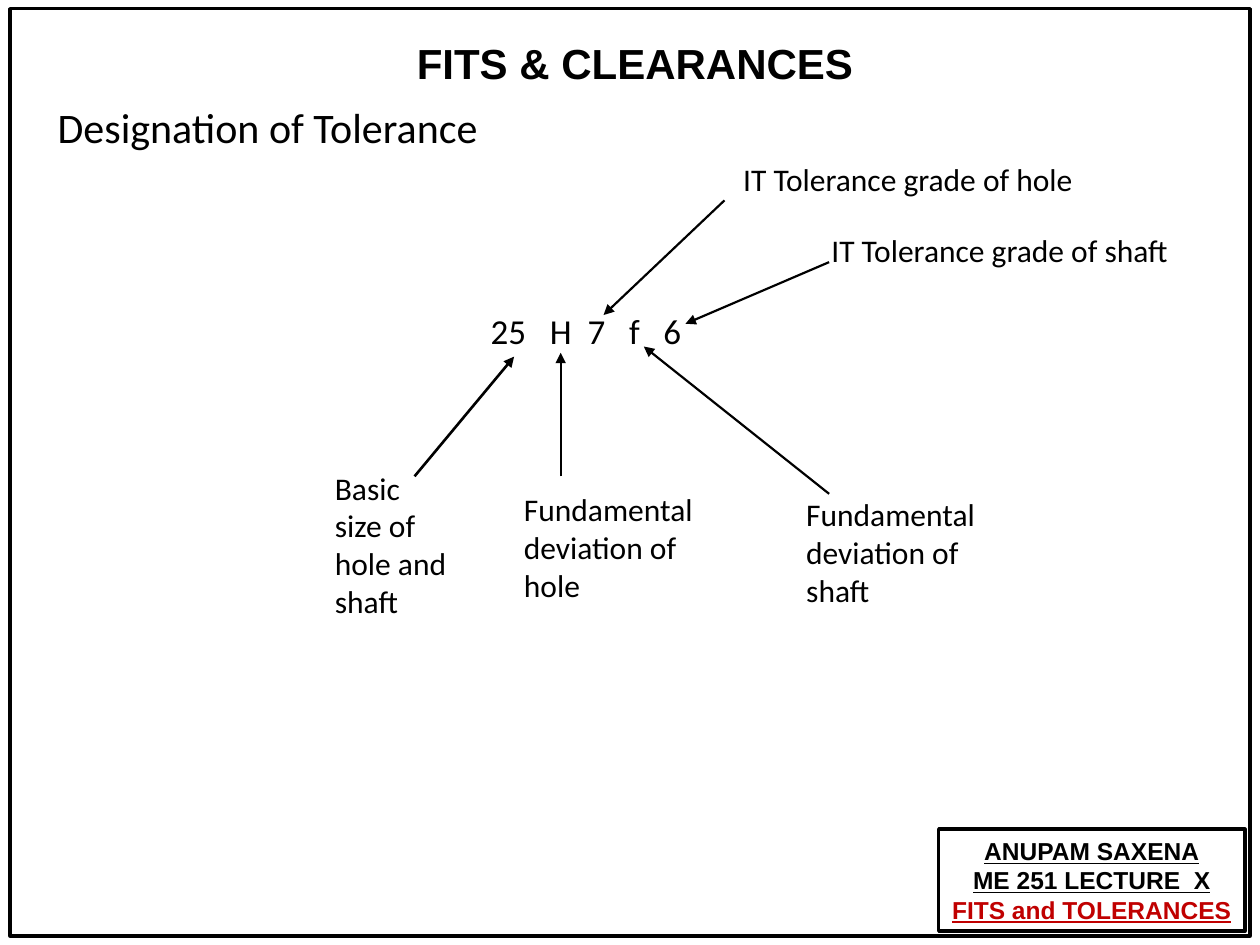
from dataclasses import dataclass, field

import lxml.etree
import pptx
import pptx.dml.color
import pptx.enum.shapes
import pptx.enum.text
import pptx.oxml.ns
import pptx.util

Pt = pptx.util.Pt
qn = pptx.oxml.ns.qn
ALIGN = pptx.enum.text.PP_ALIGN
ANCHOR = pptx.enum.text.MSO_ANCHOR
RECT = pptx.enum.shapes.MSO_SHAPE.RECTANGLE
STRAIGHT = pptx.enum.shapes.MSO_CONNECTOR.STRAIGHT

BLACK = pptx.dml.color.RGBColor(0, 0, 0)
RED = pptx.dml.color.RGBColor(0xC0, 0, 0)

BODY = {"name": "Calibri", "size": Pt(18)}
CODE = {"name": "Calibri", "size": Pt(20)}
TOPIC = {"name": "Calibri", "size": Pt(24)}
HEAD = {"name": "Arial", "size": Pt(24), "bold": True}
STAMP = {"name": "Arial", "size": Pt(14), "bold": True, "underline": True}


@dataclass
class Label:
    text: str
    left: float
    top: float
    width: float
    height: float
    font: dict = field(default_factory=lambda: BODY)
    align: ALIGN = ALIGN.LEFT
    wrap: bool = True


@dataclass
class Arrow:
    start: tuple[float, float]
    end: tuple[float, float]
    weight: float = 1.25


LABELS = [
    Label("FITS & CLEARANCES", 229.7, 18, 266.4, 36, HEAD, ALIGN.CENTER, False),
    Label("Designation of Tolerance", 25.9, 54.7, 465.1, 36, TOPIC),
    Label("Basic size of hole and shaft", 184.3, 264.2, 79.2, 94.3),
    Label("Fundamental deviation of hole", 292.3, 276.5, 118.8, 72.7),
    Label("IT Tolerance grade of hole", 417.6, 87.8, 244.1, 28.8),
    Label("Fundamental deviation of shaft", 453.6, 279.4, 118.8, 72.7),
    Label("IT Tolerance grade of shaft", 468, 128.2, 244.1, 28.8),
]
SYMBOLS = Label("25\tH\t7\tf\t6", 190.1, 173.5, 289.4, 31.7, CODE)
INDENT = 90.3
STOPS = [33.84, 55.34, 79.04, 98.7]

ARROWS = [
    Arrow((236.9, 272.2), (293.8, 203.8), 1.5),
    Arrow((320.4, 272.2), (320.4, 201.6)),
    Arrow((414, 114.5), (344.9, 180)),
    Arrow((473.8, 282.2), (367.9, 198)),
    Arrow((473.8, 149.8), (391.7, 185)),
]


def style(item: object, looks: dict) -> None:
    for key, value in looks.items():
        setattr(item, key, value)


def write(frame, text: str, font: dict, align: ALIGN, wrap: bool) -> None:
    frame.text = text
    frame.word_wrap = wrap
    for line in frame.paragraphs:
        line.alignment = align
        for run in line.runs:
            style(run.font, font)
            run.font.color.rgb = BLACK


def add_label(slide, label: Label):
    box = slide.shapes.add_textbox(
        Pt(label.left), Pt(label.top), Pt(label.width), Pt(label.height))
    write(box.text_frame, label.text, label.font, label.align, label.wrap)
    return box.text_frame


def add_frame(slide, left: float, top: float, width: float, height: float):
    shape = slide.shapes.add_shape(
        RECT, Pt(left), Pt(top), Pt(width), Pt(height))
    shape.shadow.inherit = False
    shape.fill.background()
    shape.line.color.rgb = BLACK
    shape.line.width = Pt(2)
    return shape.text_frame


def add_arrow(slide, arrow: Arrow) -> None:
    ends = [Pt(value) for value in arrow.start + arrow.end]
    line = slide.shapes.add_connector(STRAIGHT, *ends)
    line.line.color.rgb = BLACK
    line.line.width = Pt(arrow.weight)
    edge = line.line._get_or_add_ln()
    lxml.etree.SubElement(edge, qn("a:tailEnd"), type="triangle")
    lxml.etree.SubElement(line._element.spPr, qn("a:effectLst"))


def add_stops(frame, stops: list[float]) -> None:
    props = frame.paragraphs[0]._p.get_or_add_pPr()
    tabs = lxml.etree.SubElement(props, qn("a:tabLst"))
    for stop in stops:
        lxml.etree.SubElement(tabs, qn("a:tab"), pos=str(Pt(stop)), algn="l")


def main() -> None:
    deck = pptx.Presentation()
    style(deck, {"slide_width": Pt(720), "slide_height": Pt(540)})
    slide = deck.slides.add_slide(deck.slide_layouts[6])

    add_frame(slide, 5.8, 5, 708.5, 529.9)
    stamp = add_frame(slide, 536.4, 473.8, 175, 58.3)
    stamp.vertical_anchor = ANCHOR.MIDDLE
    write(stamp, "ANUPAM SAXENA\nME 251 LECTURE  X\nFITS and TOLERANCES",
          STAMP, ALIGN.CENTER, False)
    stamp.paragraphs[-1].runs[0].font.color.rgb = RED

    for label in LABELS:
        add_label(slide, label)
    code = add_label(slide, SYMBOLS)
    code.margin_left = Pt(INDENT)
    add_stops(code, STOPS)
    for arrow in ARROWS:
        add_arrow(slide, arrow)

    deck.save("out.pptx")


if __name__ == "__main__":
    main()
